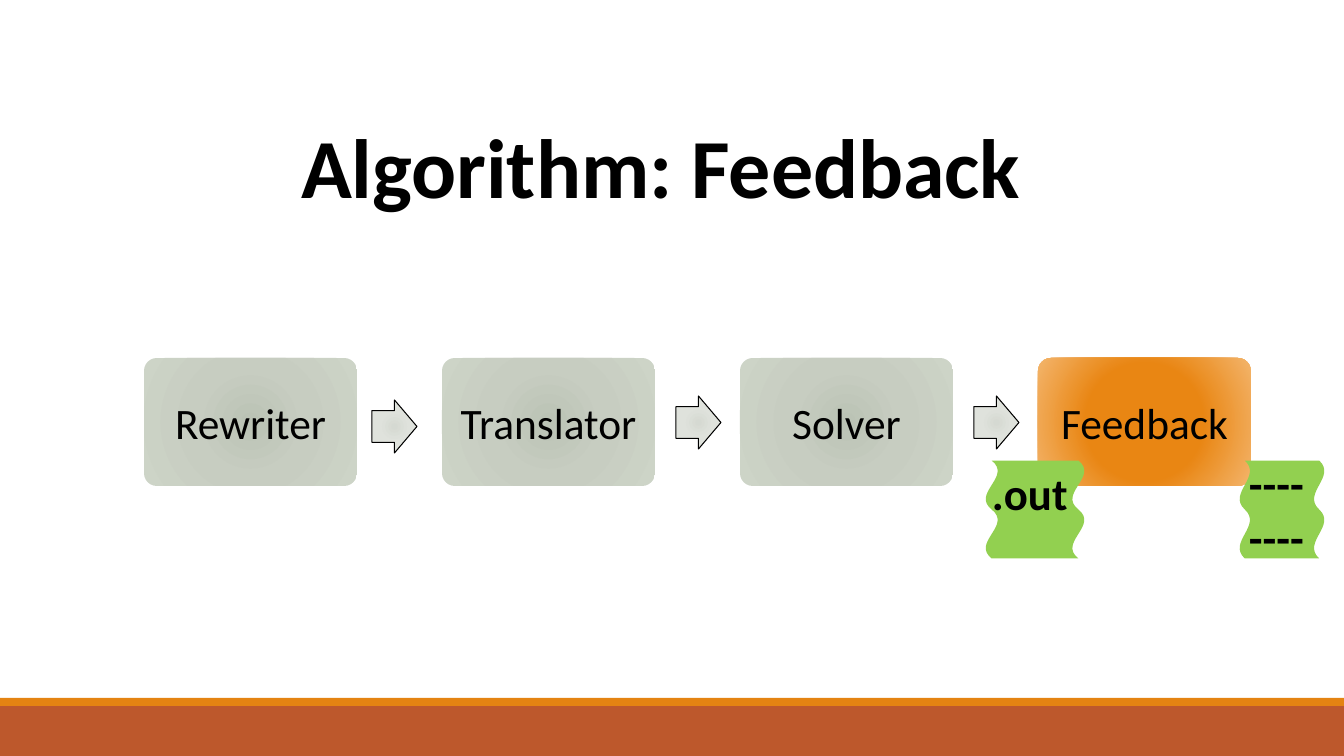
from pptx import Presentation
from pptx import util as u
from pptx.dml.color import RGBColor
from pptx.enum import shapes, text
from pptx.oxml import ns, parse_xml

PX = 914400 / 100.8
W, H = 1344, 756
BOX_W, BOX_H, BOX_X, BOX_Y, BOX_STEP = 213, 128, 144, 358, 298

GREY_BOX = [(0, "BBC3B5"), (45, "C7CDC1"), (100, "CDD4C7")]
GREY_ARROW = [(0, "D5D9D2"), (45, "DFE2DC"), (100, "E3E6E0")]
ORANGE_BOX = [(0, "EB8713"), (47, "E98613"), (100, "F3B56C")]

G = shapes.MSO_SHAPE
CENTER, LEFT = text.PP_ALIGN.CENTER, text.PP_ALIGN.LEFT
MIDDLE, TOP = text.MSO_ANCHOR.MIDDLE, text.MSO_ANCHOR.TOP

prs = Presentation()
prs.slide_width, prs.slide_height = round(W * PX), round(H * PX)
s = prs.slides.add_slide(prs.slide_layouts[6])


def add_shape(kind, box, fill, adjustments=()):
    """Add a borderless shape; fill is a hex colour or a list of radial stops."""
    sp = s.shapes.add_shape(kind, *[round(v * PX) for v in box])
    sp.shadow.inherit = False
    sp.line.fill.background()
    for i, value in enumerate(adjustments):
        sp.adjustments[i] = value
    if isinstance(fill, str):
        sp.fill.solid()
        sp.fill.fore_color.rgb = RGBColor.from_string(fill)
        return sp
    sp.fill.background()
    stops = "".join(
        f'<a:gs pos="{pos * 1000}"><a:srgbClr val="{color}"/></a:gs>' for pos, color in fill)
    gradient = parse_xml(
        f'<a:gradFill {ns.nsdecls("a")} rotWithShape="1"><a:gsLst>{stops}</a:gsLst>'
        '<a:path path="circle"><a:fillToRect l="50000" t="50000" r="50000" b="50000"/>'
        '</a:path></a:gradFill>')
    spPr = sp._element.spPr
    spPr.replace(spPr.find(ns.qn("a:noFill")), gradient)
    return sp


def write(sp, lines, size, bold=False, align=LEFT, anchor=TOP):
    tf = sp.text_frame
    tf.word_wrap = True
    tf.vertical_anchor = anchor
    tf.text = "\n".join(lines)
    for p in tf.paragraphs:
        p.alignment = align
        font = p.runs[0].font
        for name, value in {"name": "Calibri", "size": u.Pt(size), "bold": bold}.items():
            setattr(font, name, value)
        font.color.rgb = RGBColor.from_string("000000")


# Footer bands
add_shape(G.RECTANGLE, (0, 706, W, 50), "BD582C")
add_shape(G.RECTANGLE, (0, 698, W, 8), "E48312")

# Pipeline stages
for i, stage in enumerate(["Rewriter", "Translator", "Solver", "Feedback"]):
    fill = ORANGE_BOX if stage == "Feedback" else GREY_BOX
    sp = add_shape(G.ROUNDED_RECTANGLE, (BOX_X + i * BOX_STEP, BOX_Y, BOX_W, BOX_H), fill, [0.1])
    write(sp, [stage], 31, align=CENTER, anchor=MIDDLE)

for x, y in [(372, 400), (676, 396), (974, 396)]:
    arrow = add_shape(G.RIGHT_ARROW, (x, y, 45, 53), GREY_ARROW, [0.6, 0.5])
    arrow.line.color.rgb = RGBColor.from_string("000000")
    arrow.line.width = u.Pt(0.75)

# Output files
for box in [(986, 460, 98, 99), (1233, 467, 98, 85)]:
    add_shape(G.DOUBLE_WAVE, box, "92D050").rotation = 90

# Title and file labels
for box, lines, size, align in [
    ((57, 110, 1208, 112), ["Algorithm: Feedback"], 60, CENTER),
    ((982, 461, 113, 65), [".out"], 32, LEFT),
    ((1239, 451, 85, 119), ["----", "----"], 32, LEFT),
]:
    tb = s.shapes.add_textbox(*[round(v * PX) for v in box])
    write(tb, lines, size, bold=True, align=align)

prs.save("out.pptx")
